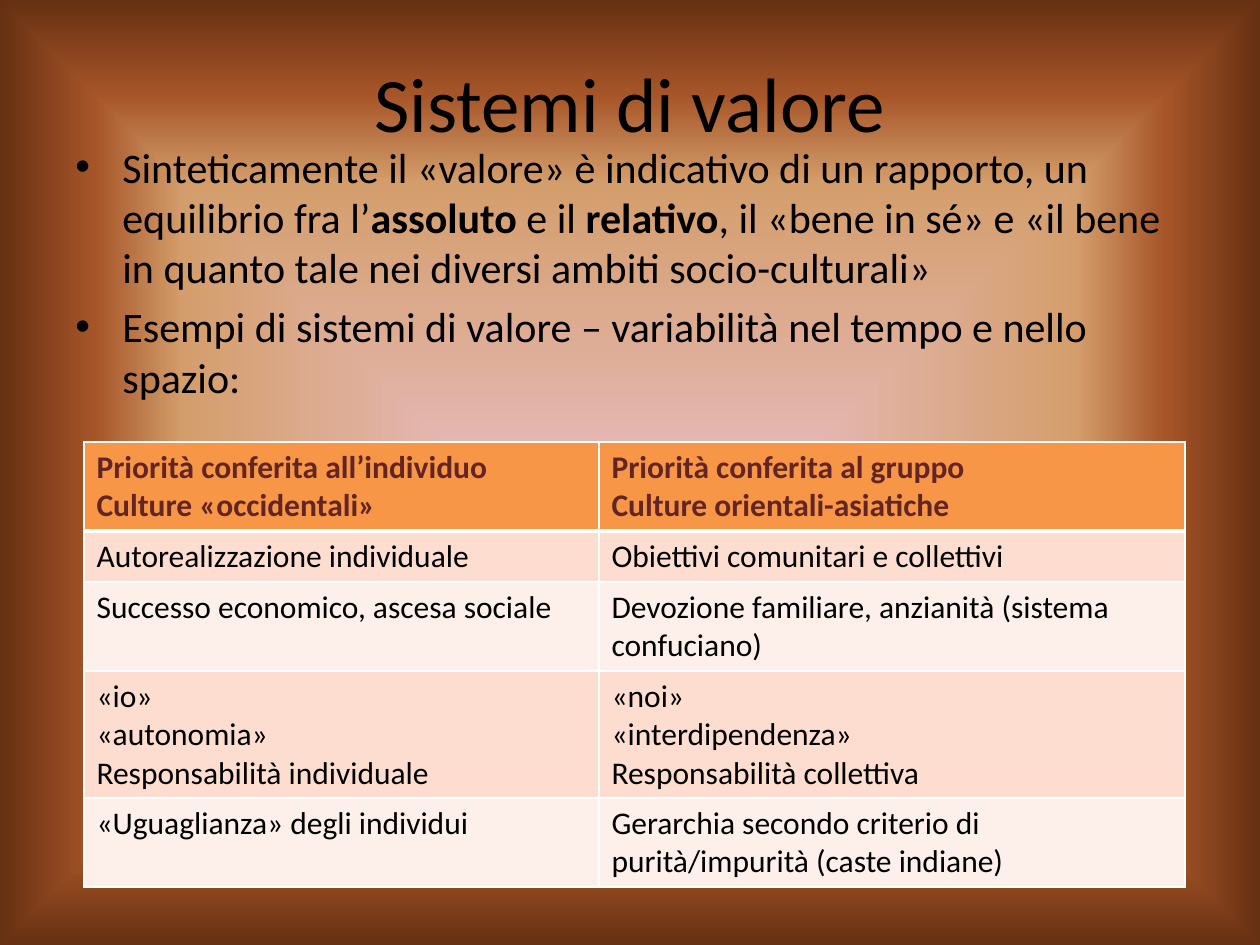
"""Builds the slide on value systems: title, two bullets and a comparison table."""
import lxml.etree
import pptx
import pptx.dml.color
import pptx.enum.text
import pptx.oxml.ns
import pptx.util

PX = pptx.util.Inches(1) / 126
COLORS = {
    "text": "000000", "heading": "632523", "header": "F79646",
    "odd": "FCDDCF", "even": "FDEFE9", "border": "FFFFFF",
}
GRADIENT = [(0, "E6B9B8"), (61, "D49E6C"), (80, "A65528"), (100, "663012")]


def add_child(parent, tag, **attributes):
    return lxml.etree.SubElement(parent, pptx.oxml.ns.qn(tag), attributes)


def add_span(para, text, size, color="text", bold=False):
    span = para.add_run()
    span.text = text
    span.font.name = "Calibri"
    span.font.size = pptx.util.Pt(size)
    span.font.bold = bold
    span.font.color.rgb = pptx.dml.color.RGBColor.from_string(COLORS[color])


deck = pptx.Presentation()
deck.slide_width = round(1260 * PX)
deck.slide_height = round(945 * PX)
page = deck.slides.add_slide(deck.slide_layouts[6])

page.background.fill.gradient()
gradient = page._element.xpath(".//p:bg//a:gradFill")[0]
for child in list(gradient):
    gradient.remove(child)
stops = add_child(gradient, "a:gsLst")
for position, color in GRADIENT:
    stop = add_child(stops, "a:gs", pos=str(position * 1000))
    add_child(stop, "a:srgbClr", val=color)
shade = add_child(gradient, "a:path", path="shape")
add_child(shade, "a:fillToRect", l="50000", t="50000", r="50000", b="50000")

title = page.shapes.add_textbox(*[round(n * PX) for n in (63, 38, 1134, 127)]).text_frame
title.word_wrap = True
title.vertical_anchor = pptx.enum.text.MSO_ANCHOR.MIDDLE
title.paragraphs[0].alignment = pptx.enum.text.PP_ALIGN.CENTER
add_span(title.paragraphs[0], "Sistemi di valore", 44)

bullets = [
    [("Sinteticamente il «valore» è indicativo di un rapporto, un equilibrio fra l’", False),
     ("assoluto", True), (" e il ", False), ("relativo", True),
     (", il «bene in sé» e «il bene in quanto tale nei diversi ambiti socio-culturali»", False)],
    [("Esempi di sistemi di valore – variabilità nel tempo e nello spazio:", False)],
]
body = page.shapes.add_textbox(*[round(n * PX) for n in (63, 135, 1134, 709)]).text_frame
body.word_wrap = True
for index, spans in enumerate(bullets):
    para = body.add_paragraph() if index else body.paragraphs[0]
    properties = para._p.get_or_add_pPr()
    indent = round(47 * PX)
    properties.set("marL", str(indent))
    properties.set("indent", str(-indent))
    add_child(properties, "a:buFont", typeface="Arial")
    add_child(properties, "a:buChar", char="•")
    if index:
        para.space_before = pptx.util.Pt(4.8)
    for text, bold in spans:
        add_span(para, text, 24, bold=bold)

rows = [
    (["Priorità conferita all’individuo", "Culture «occidentali»"],
     ["Priorità conferita al gruppo", "Culture orientali-asiatiche"]),
    (["Autorealizzazione individuale"], ["Obiettivi comunitari e collettivi"]),
    (["Successo economico, ascesa sociale"],
     ["Devozione familiare, anzianità (sistema confuciano)"]),
    (["«io»", "«autonomia»", "Responsabilità individuale"],
     ["«noi»", "«interdipendenza»", "Responsabilità collettiva"]),
    (["«Uguaglianza» degli individui"],
     ["Gerarchia secondo criterio di purità/impurità (caste indiane)"]),
]
widths = [515, 586]
heights = [89, 51, 89, 127, 89]
frame = [round(n * PX) for n in (84, 442, sum(widths), sum(heights))]
table = page.shapes.add_table(len(rows), len(widths), *frame).table
for column, width in zip(table.columns, widths):
    column.width = round(width * PX)
for row, height in zip(table.rows, heights):
    row.height = round(height * PX)

for r, row in enumerate(rows):
    fill = "header" if r == 0 else "odd" if r % 2 else "even"
    for c, lines in enumerate(row):
        cell = table.cell(r, c)
        properties = cell._tc.get_or_add_tcPr()
        for side in "LRTB":
            thick = (r, side) in ((0, "B"), (1, "T"))
            weight = pptx.util.Pt(3 if thick else 1)
            border = add_child(properties, f"a:ln{side}", w=str(weight))
            add_child(add_child(border, "a:solidFill"), "a:srgbClr", val=COLORS["border"])
        cell.fill.solid()
        cell.fill.fore_color.rgb = pptx.dml.color.RGBColor.from_string(COLORS[fill])
        for index, line in enumerate(lines):
            para = cell.text_frame.add_paragraph() if index else cell.text_frame.paragraphs[0]
            add_span(para, line, 18, "text" if r else "heading", r == 0)

deck.save("out.pptx")
